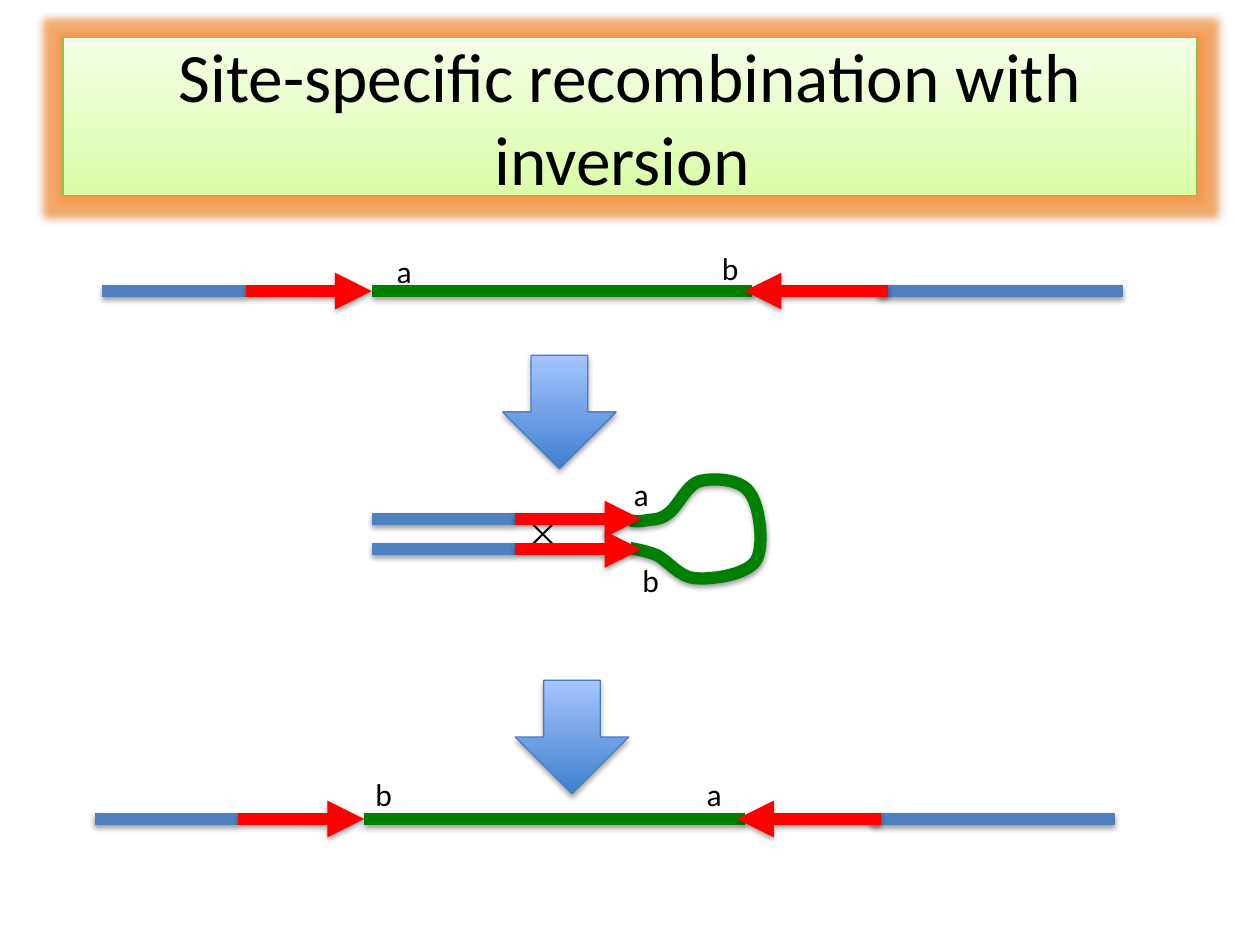
from pptx import Presentation
from pptx.dml.color import RGBColor
from pptx.enum.shapes import MSO_CONNECTOR, MSO_SHAPE
from pptx.enum.text import MSO_ANCHOR, MSO_AUTO_SIZE, PP_ALIGN
from pptx.oxml import parse_xml
from pptx.oxml.ns import nsdecls, qn
from pptx.util import Pt

PX = 9144
BLACK = RGBColor(0x00, 0x00, 0x00)
FLANK_BLUE = RGBColor(0x4F, 0x81, 0xBD)
SITE_RED = RGBColor(0xFF, 0x00, 0x00)
SEGMENT_GREEN = RGBColor(0x00, 0x80, 0x00)
TITLE_BOTTOM = RGBColor(0xDA, 0xFD, 0xA7)
TITLE_TOP = RGBColor(0xF5, 0xFF, 0xE7)
TITLE_EDGE = RGBColor(0x98, 0xB9, 0x55)
TITLE_GLOW = RGBColor(0xF7, 0x96, 0x46)
STEP_BOTTOM = RGBColor(0x3F, 0x80, 0xCE)
STEP_TOP = RGBColor(0xA4, 0xC4, 0xFF)
STEP_EDGE = RGBColor(0x4B, 0x7E, 0xBC)

LOOP_START = (500, 413)
LOOP_CURVES = [
    ((504, 414), (508, 414), (513, 413)),
    ((518, 412), (524, 413), (531, 407)),
    ((538, 402), (545, 385), (555, 382)),
    ((566, 379), (588, 380), (595, 391)),
    ((603, 401), (607, 434), (600, 445)),
    ((593, 456), (566, 460), (553, 459)),
    ((540, 459), (531, 446), (522, 441)),
    ((513, 437), (500, 435), (500, 435)),
]


def write(frame, text, size=18, font="Calibri", color=BLACK, align=PP_ALIGN.LEFT):
    paragraph = frame.paragraphs[0]
    paragraph.alignment = align
    run = paragraph.add_run()
    run.text = text
    run.font.size = Pt(size)
    run.font.name = font
    run.font.color.rgb = color


def curve_points(start, curves, steps=12):
    for first, second, end in curves:
        for step in range(1, steps + 1):
            t = step / steps
            weights = ((1 - t) ** 3, 3 * t * (1 - t) ** 2, 3 * t**2 * (1 - t), t**3)
            corners = (start, first, second, end)
            yield tuple(
                round(PX * sum(w * c[axis] for w, c in zip(weights, corners)))
                for axis in (0, 1)
            )
        start = end


class Diagram:
    strand_width = Pt(7)
    edge_width = Pt(0.75)

    def __init__(self, slide):
        self.shapes = slide.shapes

    def effects(self, shape, alpha=38, blur=40000, dist=20000, angle=90, glow=None):
        halo = (
            f'<a:glow rad="101600"><a:srgbClr val="{glow}">'
            '<a:alpha val="75000"/></a:srgbClr></a:glow>'
            if glow
            else ""
        )
        shape._element.spPr.append(parse_xml(
            f'<a:effectLst {nsdecls("a")}>{halo}'
            f'<a:outerShdw blurRad="{blur}" dist="{dist}" dir="{angle * 60000}" '
            'rotWithShape="0"><a:srgbClr val="000000">'
            f'<a:alpha val="{alpha * 1000}"/></a:srgbClr></a:outerShdw></a:effectLst>'
        ))

    def panel(self, kind, left, top, width, height, bottom, upper, edge, **effects):
        shape = self.shapes.add_shape(
            kind, left * PX, top * PX, width * PX, height * PX
        )
        shape.fill.gradient()
        shape.fill.gradient_angle = 90
        for stop, color in zip(shape.fill.gradient_stops, (bottom, upper)):
            stop.color.rgb = color
        shape.line.color.rgb = edge
        shape.line.width = self.edge_width
        self.effects(shape, **effects)
        return shape

    def title(self, text):
        banner = self.panel(
            MSO_SHAPE.RECTANGLE, 50, 30, 900, 125, TITLE_BOTTOM, TITLE_TOP, TITLE_EDGE,
            alpha=15, blur=76200, dist=0, angle=225, glow=TITLE_GLOW,
        )
        banner.text_frame.word_wrap = True
        banner.text_frame.vertical_anchor = MSO_ANCHOR.MIDDLE
        write(banner.text_frame, text, size=39.6, align=PP_ALIGN.CENTER)

    def step(self, left, top):
        self.panel(
            MSO_SHAPE.DOWN_ARROW, left, top, 90, 90, STEP_BOTTOM, STEP_TOP, STEP_EDGE,
            alpha=35, dist=23000,
        )

    def line(self, start, end, y, color, arrow=False):
        strand = self.shapes.add_connector(
            MSO_CONNECTOR.STRAIGHT, start * PX, y * PX, end * PX, y * PX
        )
        strand.line.color.rgb = color
        strand.line.width = self.strand_width
        if arrow:
            strand._element.spPr.find(qn("a:ln")).append(
                parse_xml(f'<a:tailEnd {nsdecls("a")} type="triangle"/>')
            )
        self.effects(strand)

    def half_strand(self, left, y):
        self.line(left, left + 114, y, FLANK_BLUE)
        self.line(left + 114, left + 214, y, SITE_RED, arrow=True)

    def strand(self, left, y):
        self.line(left + 214, left + 516, y, SEGMENT_GREEN)
        self.line(left + 616, left + 810, y, FLANK_BLUE)
        self.line(left + 624, left + 510, y, SITE_RED, arrow=True)
        self.half_strand(left, y)

    def loop(self, start, curves):
        builder = self.shapes.build_freeform(start[0] * PX, start[1] * PX)
        builder.add_line_segments(list(curve_points(start, curves)), close=False)
        loop = builder.convert_to_shape()
        loop.fill.background()
        loop.line.color.rgb = SEGMENT_GREEN
        loop.line.width = self.strand_width
        self.effects(loop)

    def label(self, text, left, top, width=32, **style):
        box = self.shapes.add_textbox(left * PX, top * PX, width * PX, 40 * PX)
        box.text_frame.word_wrap = False
        box.text_frame.auto_size = MSO_AUTO_SIZE.SHAPE_TO_FIT_TEXT
        write(box.text_frame, text, **style)


def main():
    deck = Presentation()
    deck.slide_width = 1000 * PX
    deck.slide_height = 750 * PX
    diagram = Diagram(deck.slides.add_slide(deck.slide_layouts[6]))

    diagram.title("Site-specific recombination with inversion ")

    diagram.strand(81, 231)
    diagram.label("a", 305, 195)
    diagram.label("b", 563, 193)

    diagram.label("b", 500, 440)
    diagram.label("a", 493, 372)
    diagram.label("×", 409, 404, width=45, font="Noto Sans CJK JP")
    diagram.loop(LOOP_START, LOOP_CURVES)
    for y in (412, 436):
        diagram.half_strand(295, y)
    diagram.step(399, 282)

    diagram.strand(75, 650)
    diagram.label("a", 551, 610)
    diagram.label("b", 288, 610)
    diagram.step(409, 540)

    deck.save("out.pptx")


if __name__ == "__main__":
    main()
